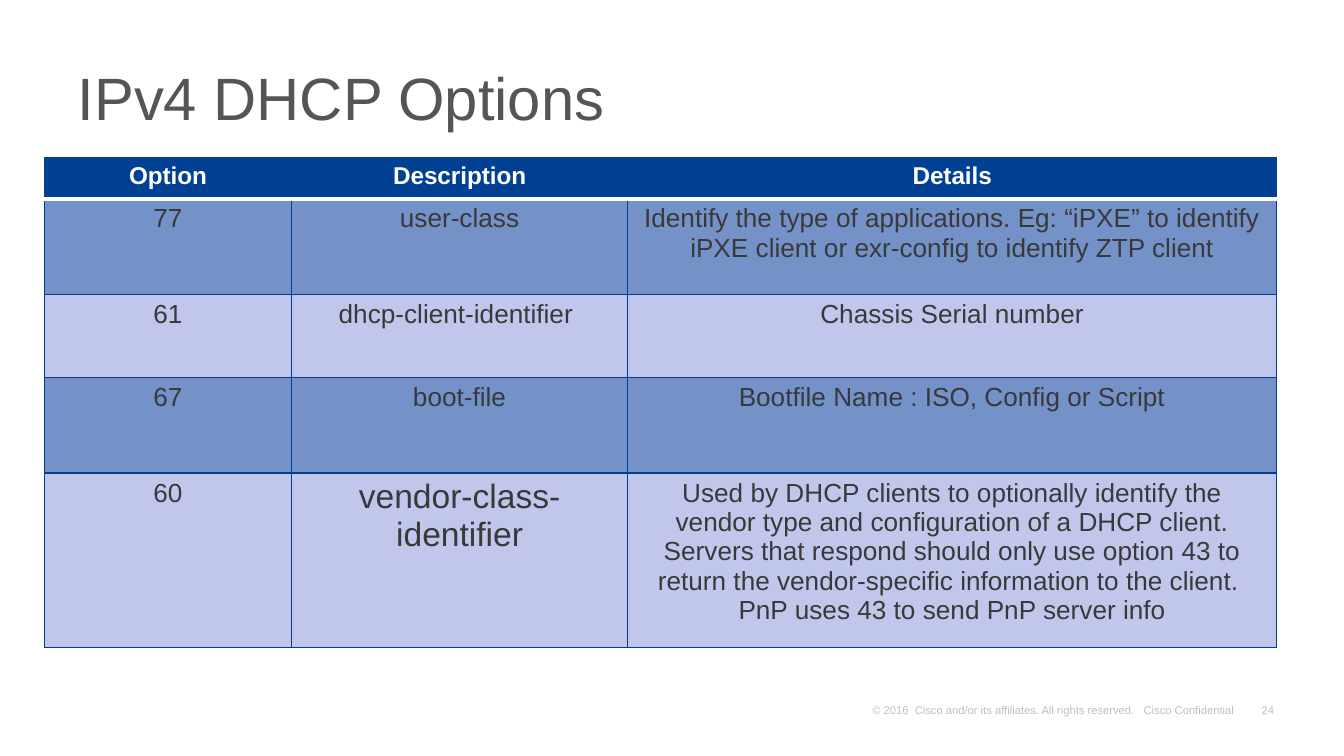
from lxml.etree import SubElement
from pptx import Presentation
from pptx.dml.color import RGBColor
from pptx.enum.text import MSO_ANCHOR as ANCHOR, PP_ALIGN as ALIGN
from pptx.oxml.ns import qn
from pptx.util import Inches, Pt

TITLE = "IPv4 DHCP Options"
PAGE = "24"
FOOTER = "© 2016  Cisco and/or its affiliates. All rights reserved.   Cisco Confidential"
HEADER = ("Option", "Description", "Details")
OPTIONS = [
    ("77", "user-class",
     "Identify the type of applications. Eg: “iPXE” to identify iPXE client "
     "or exr-config to identify ZTP client"),
    ("61", "dhcp-client-identifier ", "Chassis Serial number"),
    ("67", "boot-file", "Bootfile Name : ISO, Config or Script"),
    ("60", "vendor-class-identifier",
     "Used by DHCP clients to optionally identify the vendor type and "
     "configuration of a DHCP client. Servers that respond should only use "
     "option 43 to return the vendor-specific information to the client.  "
     "PnP uses 43 to send PnP server info"),
]
LARGE = {"vendor-class-identifier": 18}
WIDTH = 10
HEIGHT = WIDTH * 9 / 16
COLS = (1.84, 2.5, 4.83)
ROWS = (0.31, 0.71, 0.62, 0.71, 1.3)
NAVY, WHITE, GRID = "014093", "FFFFFF", "003E91"
BANDS = ("7491C8", "C1C7EB")
BODY, TITLE_GRAY, FOOT_GRAY = "39393B", "555558", "BFBFBF"


def rgb(value):
    return RGBColor.from_string(value)


def add_run(p, text, size, color, bold=False):
    r = p.add_run()
    r.text = text
    r.font.name, r.font.size, r.font.bold = "Arial", Pt(size), bold
    r.font.color.rgb = rgb(color)


def add_text(s, box, text, size, color, anchor, inset, align=ALIGN.LEFT, wrap=True, spacing=1.0):
    tf = s.shapes.add_textbox(*map(Inches, box)).text_frame
    tf.word_wrap, tf.vertical_anchor = wrap, anchor
    tf.margin_left = tf.margin_right = Inches(inset[0])
    tf.margin_top = tf.margin_bottom = Inches(inset[1])
    p = tf.paragraphs[0]
    p.alignment, p.line_spacing = align, spacing
    add_run(p, text, size, color)


def set_borders(cell, edges):
    tc_pr = cell._tc.get_or_add_tcPr()
    for i, (side, color, width) in enumerate(edges):
        ln = SubElement(tc_pr, qn(f"a:ln{side}"), w=str(Pt(width)))
        SubElement(SubElement(ln, qn("a:solidFill")), qn("a:srgbClr"), val=color)
        tc_pr.insert(i, ln)


def add_options(s):
    frame = s.shapes.add_table(len(ROWS), len(COLS), Inches(0.33), Inches(1.17),
                               Inches(sum(COLS)), Inches(sum(ROWS)))
    table = frame.table
    table.horz_banding = False
    for col, width in zip(table.columns, COLS):
        col.width = Inches(width)
    for i, (row, height, texts) in enumerate(zip(table.rows, ROWS, [HEADER] + OPTIONS)):
        row.height = Inches(height)
        head = i == 0
        fill = NAVY if head else BANDS[(i - 1) % 2]
        thin, thick = (GRID, 0.75), (WHITE, 2)
        top, bottom = thick if i == 1 else thin, thick if head else thin
        for cell, text in zip(row.cells, texts):
            cell.margin_left = cell.margin_right = Inches(0.1)
            cell.margin_top = cell.margin_bottom = Inches(0.04)
            cell.fill.solid()
            cell.fill.fore_color.rgb = rgb(fill)
            p = cell.text_frame.paragraphs[0]
            p.alignment = ALIGN.CENTER
            size = 13 if head else LARGE.get(text, 14)
            add_run(p, text, size, WHITE if head else BODY, head)
            set_borders(cell, [("L", *thin), ("R", *thin), ("T", *top), ("B", *bottom)])


def main():
    prs = Presentation()
    prs.slide_width, prs.slide_height = Inches(WIDTH), Inches(HEIGHT)
    s = prs.slides.add_slide(prs.slide_layouts[6])
    small = (0.07, 0.03)
    add_text(s, (9.31, 5.19, 0.24, 0.17), PAGE, 6, FOOT_GRAY, ANCHOR.BOTTOM, small,
             align=ALIGN.RIGHT, wrap=False)
    add_text(s, (6.42, 5.19, 2.91, 0.17), FOOTER, 6, FOOT_GRAY, ANCHOR.BOTTOM, small)
    add_text(s, (0.48, 0.37, 9.13, 0.8), TITLE, 32, TITLE_GRAY, ANCHOR.MIDDLE, (0.1, 0.05),
             spacing=0.8)
    add_options(s)
    prs.save("out.pptx")


if __name__ == "__main__":
    main()
